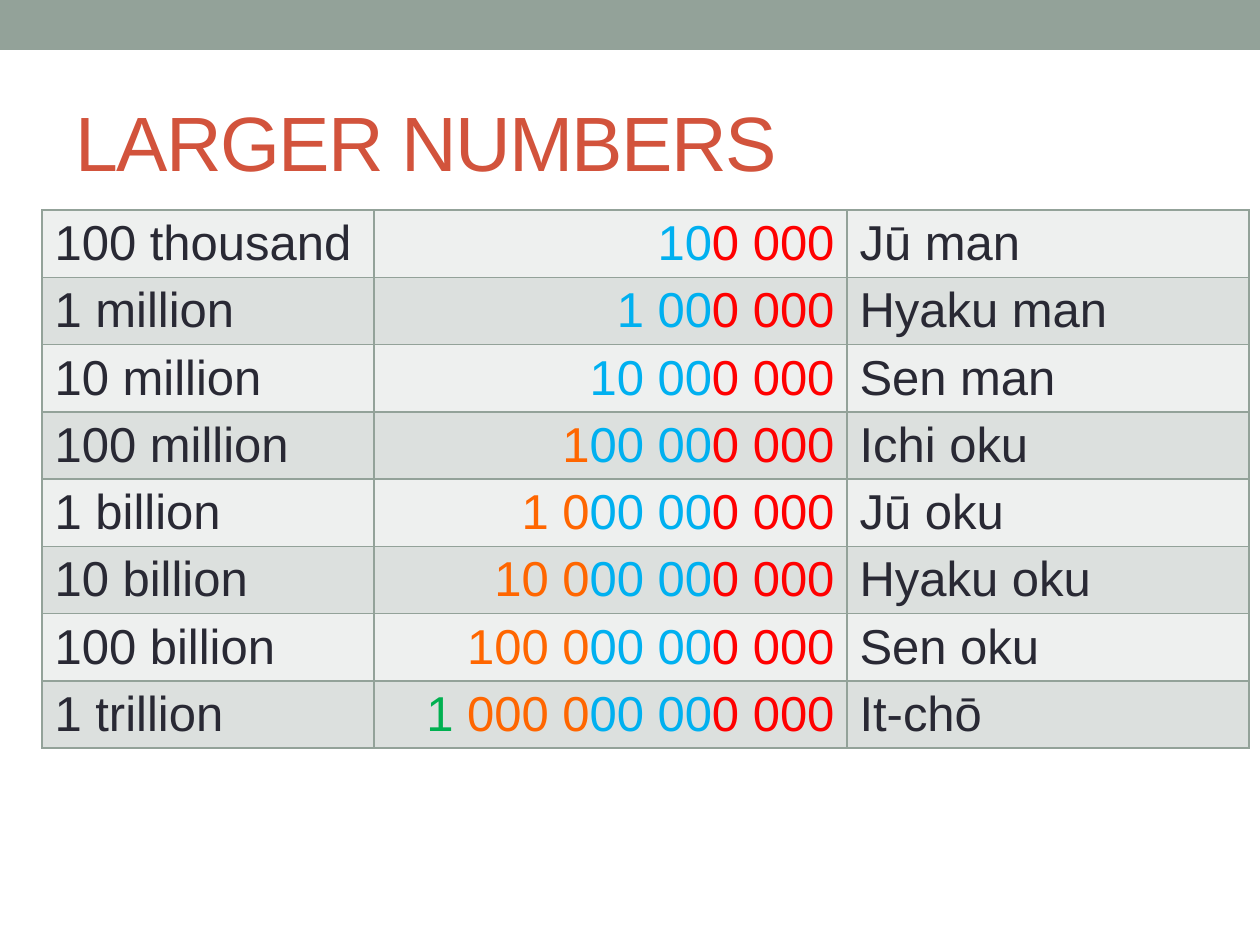
import itertools

import pptx
import pptx.dml.color
import pptx.enum.shapes
import pptx.enum.text
import pptx.oxml
import pptx.oxml.ns
import pptx.util

EMU_PER_PX = 914400 / 126
FONT = "Arial"
SAGE, RUST, INK = "93A299", "D2533C", "292934"
BANDS = ("EEF0EF", "DCE0DE")
# Colours of each group of four digits, from the right
GROUP_COLORS = ("FF0000", "00B0F0", "FF6600", "00B050")
COLUMNS = (332, 473, 402)
ROW_HEIGHT = 67
NUMBERS = [
    ("100 thousand", "100 000", "Jū man"),
    ("1 million", "1 000 000", "Hyaku man"),
    ("10 million", "10 000 000", "Sen man"),
    ("100 million", "100 000 000", "Ichi oku"),
    ("1 billion", "1 000 000 000", "Jū oku"),
    ("10 billion", "10 000 000 000", "Hyaku oku"),
    ("100 billion", "100 000 000 000", "Sen oku"),
    ("1 trillion", "1 000 000 000 000", "It-chō"),
]


def px(length):
    return pptx.util.Emu(round(length * EMU_PER_PX))


def color(value):
    return pptx.dml.color.RGBColor.from_string(value)


def add_span(para, text, size, ink):
    span = para.add_run()
    span.text = text
    for name, value in {"size": pptx.util.Pt(size), "name": FONT, "bold": False}.items():
        setattr(span.font, name, value)
    span.font.color.rgb = color(ink)
    return span


def add_band(page, left, top, width, height):
    band = page.shapes.add_shape(
        pptx.enum.shapes.MSO_SHAPE.RECTANGLE, px(left), px(top), px(width), px(height))
    band.shadow.inherit = False
    band.fill.solid()
    band.fill.fore_color.rgb = color(SAGE)
    band.line.fill.background()


def place_title(page, text, left, top, width, height):
    title = page.shapes.title
    bounds = {"left": left, "top": top, "width": width, "height": height}
    for name, value in bounds.items():
        setattr(title, name, px(value))
    title.text_frame.vertical_anchor = pptx.enum.text.MSO_ANCHOR.MIDDLE
    para = title.text_frame.paragraphs[0]
    para.alignment = pptx.enum.text.PP_ALIGN.LEFT
    span = add_span(para, text, 44, RUST)
    span.font._element.set("spc", "-100")


def color_groups(number):
    """Split a number into (text, colour) parts of four digits from the right."""
    inks = []
    digits = 0
    for character in reversed(number):
        inks.append(GROUP_COLORS[digits // 4])
        digits += character.isdigit()
    pairs = zip(number, reversed(inks))
    for ink, part in itertools.groupby(pairs, key=lambda pair: pair[1]):
        yield "".join(character for character, _ in part), ink


def set_borders(cell):
    properties = cell._tc.get_or_add_tcPr()
    for index, side in enumerate(("lnL", "lnR", "lnT", "lnB")):
        properties.insert(index, pptx.oxml.parse_xml(
            f'<a:{side} {pptx.oxml.ns.nsdecls("a")} w="12700"><a:solidFill>'
            f'<a:srgbClr val="{SAGE}"/></a:solidFill></a:{side}>'))


def add_number_table(page, left, top):
    table = page.shapes.add_table(
        len(NUMBERS), len(COLUMNS), px(left), px(top),
        px(sum(COLUMNS)), px(ROW_HEIGHT * len(NUMBERS))).table
    table.first_row = False
    table.horz_banding = False
    for column, width in zip(table.columns, COLUMNS):
        column.width = px(width)
    for row_index, texts in enumerate(NUMBERS):
        table.rows[row_index].height = px(ROW_HEIGHT)
        for column_index, text in enumerate(texts):
            cell = table.cell(row_index, column_index)
            cell.fill.solid()
            cell.fill.fore_color.rgb = color(BANDS[row_index % 2])
            set_borders(cell)
            para = cell.text_frame.paragraphs[0]
            parts = [(text, INK)]
            if column_index == 1:
                para.alignment = pptx.enum.text.PP_ALIGN.RIGHT
                parts = color_groups(text)
            for part, ink in parts:
                add_span(para, part, 28, ink)


def main():
    deck = pptx.Presentation()
    deck.slide_width, deck.slide_height = px(1260), px(945)
    page = deck.slides.add_slide(deck.slide_layouts[5])
    add_band(page, 0, 0, 1260, 50)
    place_title(page, "LARGER NUMBERS", 63, 73, 1134, 136)
    add_number_table(page, 42, 210)
    deck.save("out.pptx")


if __name__ == "__main__":
    main()
